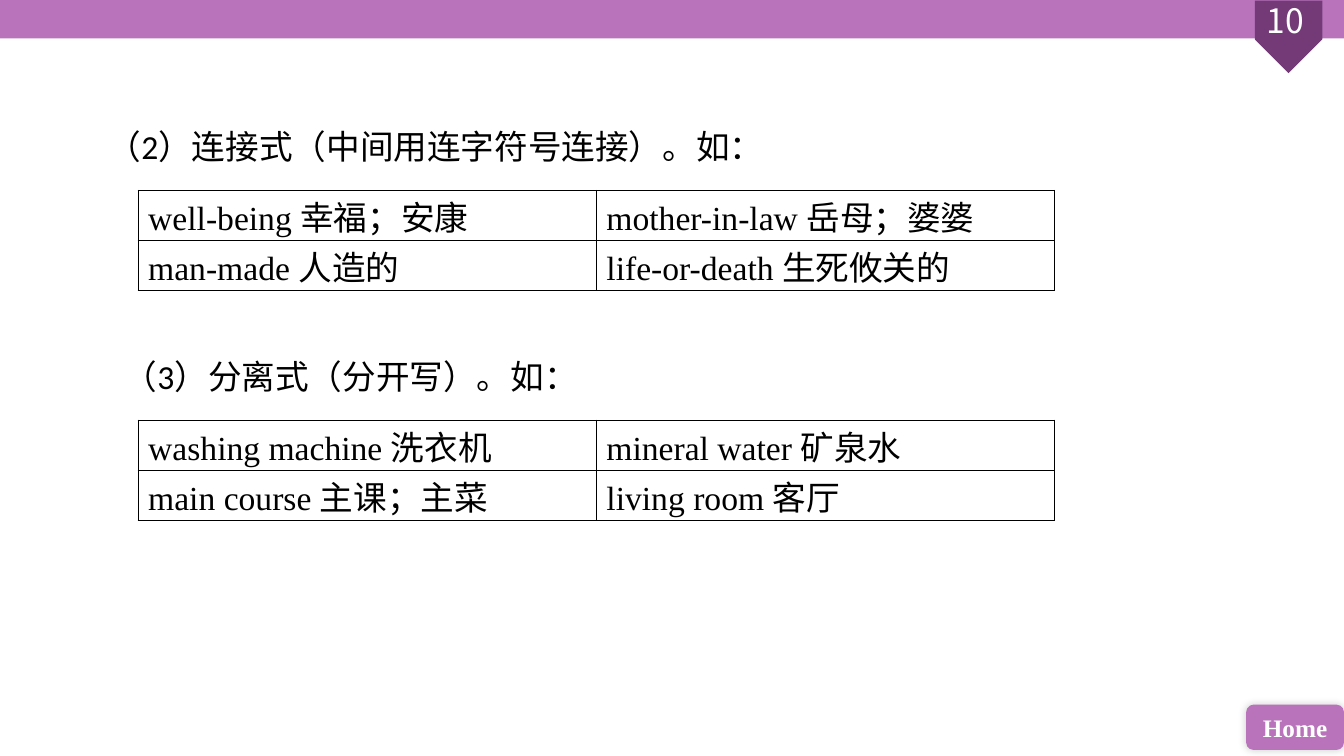
from lxml import etree
from pptx import Presentation
from pptx.dml.color import RGBColor
from pptx.enum import shapes, text
from pptx.oxml import ns
from pptx.util import Inches, Pt

COLORS = {"bar": "B873BB", "badge": "743A78", "ink": "000000", "light": "FFFFFF"}
SECTIONS = [
    (0.47, 1.12, "（2）连接式（中间用连字符号连接）。如：",
     [["well-being 幸福；安康", "mother-in-law 岳母；婆婆"],
      ["man-made 人造的", "life-or-death 生死攸关的"]]),
    (0.63, 3.4, "（3）分离式（分开写）。如：",
     [["washing machine 洗衣机", "mineral water 矿泉水"],
      ["main course 主课；主菜", "living room 客厅"]]),
]


def color(name):
    return RGBColor.from_string(COLORS[name])


def child(parent, tag, **attributes):
    return etree.SubElement(parent, ns.qn(tag), attributes)


def write(frame, words, font, size, ink, bold=False):
    frame.text = words
    para = frame.paragraphs[0]
    para.font.name, para.font.size, para.font.bold = font, Pt(size), bold
    para.font.color.rgb = color(ink)
    return para


def add_block(page, kind, left, top, width, height, fill):
    block = page.shapes.add_shape(kind, Inches(left), Inches(top),
                                  Inches(width), Inches(height))
    block.shadow.inherit = False
    block.fill.solid()
    block.fill.fore_color.rgb = color(fill)
    block.line.fill.background()
    return block


def add_text(page, left, top, width, height, words, font, ink):
    box = page.shapes.add_textbox(Inches(left), Inches(top),
                                  Inches(width), Inches(height))
    box.text_frame.word_wrap = True
    return box, write(box.text_frame, words, font, 24, ink)


def add_header(page, width):
    kinds = shapes.MSO_SHAPE
    add_block(page, kinds.RECTANGLE, 0, 0, width, 0.38, "bar")
    badge = add_block(page, kinds.PENTAGON, width - 0.91, 0.03, 0.72, 0.67, "badge")
    badge.rotation = 90
    number, para = add_text(page, width - 1.07, 0, 0.98, 0.5, "10",
                            "Noto Sans CJK SC", "light")
    number.text_frame.margin_top = 0
    para.alignment = text.PP_ALIGN.CENTER


def add_home_button(page, left, top, width, height):
    button = add_block(page, shapes.MSO_SHAPE.ROUNDED_RECTANGLE,
                       left, top, width, height, "bar")
    effects = button._element.spPr.find(ns.qn("a:effectLst"))
    shadow = child(effects, "a:outerShdw", blurRad=str(Pt(6)), dist="0",
                   dir=str(315 * 60000), rotWithShape="0")
    child(child(shadow, "a:srgbClr", val=COLORS["ink"]), "a:alpha", val="20000")
    frame = button.text_frame
    frame.margin_left = frame.margin_right = 0
    frame.vertical_anchor = text.MSO_ANCHOR.MIDDLE
    para = write(frame, "Home", "Times New Roman", 18, "light", bold=True)
    para.alignment = text.PP_ALIGN.CENTER


def border_cell(cell):
    """Draw a one-point line on each side, ahead of the cell's fill."""
    properties = cell._tc.get_or_add_tcPr()
    for place, side in enumerate(("a:lnL", "a:lnR", "a:lnT", "a:lnB")):
        line = child(properties, side, w=str(Pt(1)))
        child(child(line, "a:solidFill"), "a:srgbClr", val=COLORS["ink"])
        properties.insert(place, line)


def add_word_table(page, left, top, width, height, words):
    frame = page.shapes.add_table(len(words), len(words[0]), Inches(left),
                                  Inches(top), Inches(width), Inches(height))
    table = frame.table
    table.first_row = table.horz_banding = False
    for row, entries in enumerate(words):
        for column, entry in enumerate(entries):
            cell = table.cell(row, column)
            cell.fill.background()
            cell.margin_top = cell.margin_bottom = 0
            cell.vertical_anchor = text.MSO_ANCHOR.BOTTOM
            write(cell.text_frame, entry, "Times New Roman", 24, "ink")
            border_cell(cell)


def add_section(page, left, top, heading, words):
    """Place an indented heading with its table of examples below."""
    _, para = add_text(page, left, top, 12.06, 0.58, heading, "Calibri", "ink")
    para.line_spacing = 1.2
    para._p.get_or_add_pPr().set("indent", str(Inches(0.5)))
    add_word_table(page, 1.37, top + 0.77, 9.09, 0.99, words)


def main():
    deck = Presentation()
    deck.slide_width, deck.slide_height = Inches(13.33), Inches(7.5)
    page = deck.slides.add_slide(deck.slide_layouts[6])
    add_header(page, 13.33)
    add_home_button(page, 12.36, 6.99, 0.97, 0.45)
    for section in SECTIONS:
        add_section(page, *section)
    deck.save("out.pptx")


if __name__ == "__main__":
    main()
